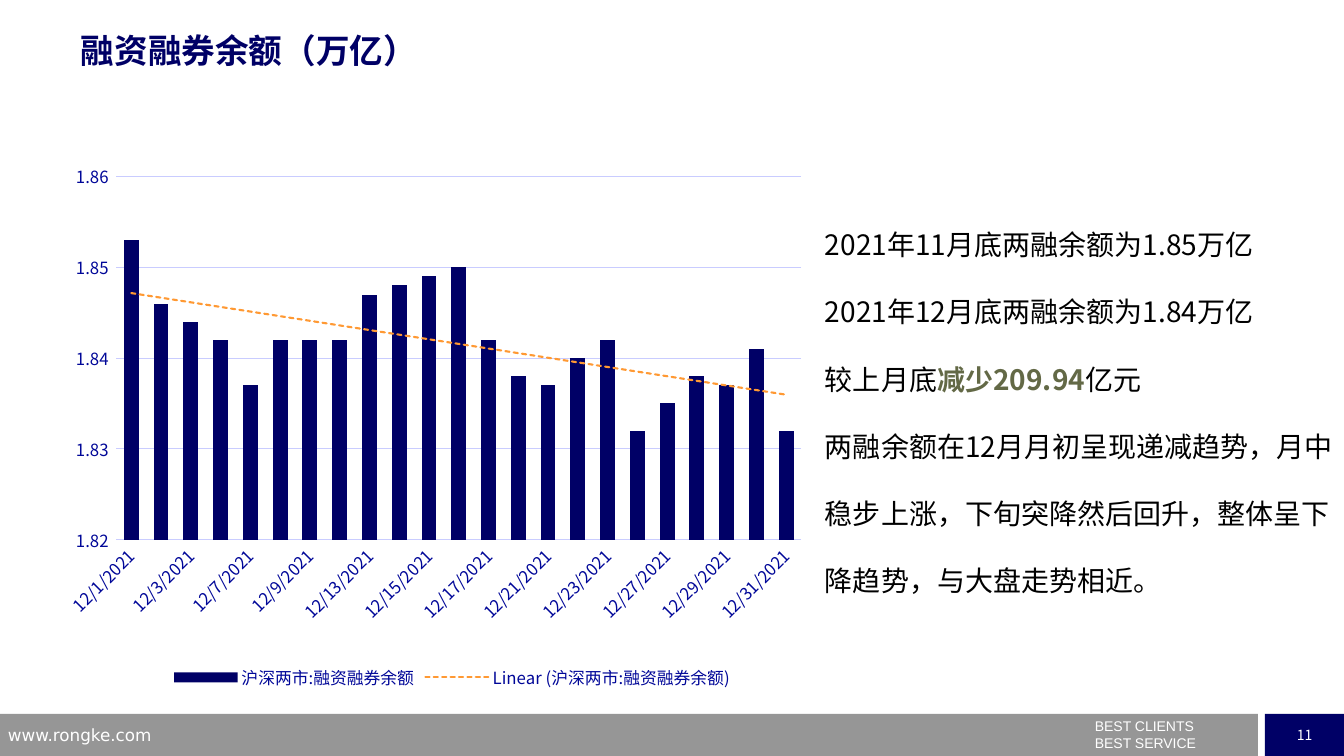
import pptx
import pptx.chart.data
import pptx.dml.color
import pptx.enum.chart
import pptx.enum.dml
import pptx.enum.shapes
import pptx.enum.text
import pptx.oxml
import pptx.oxml.ns
import pptx.util

PX = 914400 / 100.8
CJK = "Noto Sans CJK SC"
NAVY, WHITE, BLACK, GRID, LABEL = "000066", "FFFFFF", "000000", "C9CCFF", "000798"


def rgb(value):
    return pptx.dml.color.RGBColor.from_string(value)


def style(font, size, color, name=CJK, bold=False):
    """Set a font, with the same face for Latin and East Asian text."""
    font.size, font.bold, font.name = pptx.util.Pt(size), bold, name
    font.color.rgb = rgb(color)
    latin = font._element.find(pptx.oxml.ns.qn("a:latin"))
    latin.addnext(pptx.oxml.parse_xml(
        f'<a:ea {pptx.oxml.ns.nsdecls("a")} typeface="{name}"/>'))


prs = pptx.Presentation()
prs.slide_width, prs.slide_height = int(1344 * PX), int(756 * PX)
s = prs.slides.add_slide(prs.slide_layouts[5])

# Footer
for left, width, color in ((0, 1258, "969696"), (1265, 79, NAVY)):
    sp = s.shapes.add_shape(pptx.enum.shapes.MSO_SHAPE.RECTANGLE,
                            *(int(v * PX) for v in (left, 714, width, 42)))
    sp.shadow.inherit = False
    sp.fill.solid()
    sp.fill.fore_color.rgb = rgb(color)
    sp.line.fill.background()
p = sp.text_frame.paragraphs[0]
p.text = "11"
p.alignment = pptx.enum.text.PP_ALIGN.CENTER
style(p.runs[0].font, 10, WHITE)

for box, lines, size, name in (
    ((1085, 720, 258, 36), ["BEST CLIENTS", "BEST SERVICE"], 10, "Arial"),
    ((-2, 720, 325, 26), ["www.rongke.com"], 12, "DejaVu Sans"),
):
    tf = s.shapes.add_textbox(*(int(v * PX) for v in box)).text_frame
    tf.word_wrap = True
    tf.text = "\n".join(lines)
    for i, p in enumerate(tf.paragraphs):
        if len(lines) > 1:
            p.line_spacing = 0.5
        if i:
            p.space_before = pptx.util.Pt(6)
        style(p.runs[0].font, size, WHITE, name)

# Title and commentary
title = s.shapes.title
title.left, title.top, title.width, title.height = (int(v * PX) for v in (81, 30, 907, 39))
body = s.shapes.add_textbox(*(int(v * PX) for v in (825, 194, 519, 397)))
for sp in (title, body):
    tf = sp.text_frame
    tf.margin_left = tf.margin_right = tf.margin_top = tf.margin_bottom = 0
    tf.word_wrap = True
    tf.auto_size = pptx.enum.text.MSO_AUTO_SIZE.NONE
    tf.vertical_anchor = pptx.enum.text.MSO_ANCHOR.TOP

title.text_frame.text = "融资融券余额（万亿）"
p = title.text_frame.paragraphs[0]
p.alignment = pptx.enum.text.PP_ALIGN.LEFT
style(p.runs[0].font, 24, NAVY, bold=True)

comments = [
    ["2021年11月底两融余额为1.85万亿"],
    ["2021年12月底两融余额为1.84万亿"],
    ["较上月底", "减少209.94", "亿元"],
    ["两融余额在12月月初呈现递减趋势，月中稳步上涨，下旬突降然后回升，整体呈下降趋势，与大盘走势相近。"],
]
tf = body.text_frame
for i, parts in enumerate(comments):
    p = tf.add_paragraph() if i else tf.paragraphs[0]
    p.line_spacing = 2.0
    for j, part in enumerate(parts):
        r = p.add_run()
        r.text = part
        style(r.font, 20, "636946" if j == 1 else BLACK, bold=j == 1)

# Chart: trading days of December 2021 as date serials, weekends left out
data = pptx.chart.data.CategoryChartData(number_format="0.000")
data.categories = [day for day in range(44531, 44562) if day % 7 > 1]
data.categories.number_format = "m/d/yyyy"
data.add_series("沪深两市:融资融券余额", [
    1.853, 1.846, 1.844, 1.842, 1.837, 1.842, 1.842, 1.842, 1.847, 1.848, 1.849, 1.85,
    1.842, 1.838, 1.837, 1.84, 1.842, 1.832, 1.835, 1.838, 1.837, 1.841, 1.832])
chart = s.shapes.add_chart(pptx.enum.chart.XL_CHART_TYPE.COLUMN_CLUSTERED,
                           *(int(v * PX) for v in (25, 112, 854, 582)), data).chart
chart.has_title = False
chart.has_legend = True
chart.legend.position = pptx.enum.chart.XL_LEGEND_POSITION.BOTTOM
chart.legend.include_in_layout = False
style(chart.font, 10, BLACK)
style(chart.legend.font, 12, LABEL)

days, values = chart.category_axis, chart.value_axis
for axis in (days, values):
    axis.major_tick_mark = axis.minor_tick_mark = pptx.enum.chart.XL_TICK_MARK.NONE
    style(axis.tick_labels.font, 12, LABEL)
days.tick_labels.number_format = "m/d/yyyy"
days.tick_labels.number_format_is_linked = False
days._element.txPr.find(pptx.oxml.ns.qn("a:bodyPr")).set("rot", "-2700000")
days._element.find(pptx.oxml.ns.qn("c:auto")).set("val", "0")
values.minimum_scale, values.maximum_scale, values.major_unit = 1.82, 1.86, 0.01
values.tick_labels.number_format = "0.00_ "
values.tick_labels.number_format_is_linked = False
values.format.line.fill.background()
for line in (days.format.line, values.major_gridlines.format.line):
    line.color.rgb = rgb(GRID)
    line.width = pptx.util.Pt(0.75)

plot = chart.plots[0]
plot.gap_width, plot.overlap, plot.vary_by_categories = 100, -24, False
series = plot.series[0]
series.format.fill.solid()
series.format.fill.fore_color.rgb = rgb(NAVY)
series._element.find(pptx.oxml.ns.qn("c:cat")).addprevious(pptx.oxml.parse_xml(
    f'<c:trendline {pptx.oxml.ns.nsdecls("c", "a")}><c:spPr><a:ln w="19050" cap="rnd">'
    '<a:solidFill><a:srgbClr val="FF9933"/></a:solidFill><a:prstDash val="sysDash"/></a:ln></c:spPr>'
    '<c:trendlineType val="linear"/><c:dispRSqr val="0"/><c:dispEq val="0"/></c:trendline>'))

area = chart._chartSpace.chart.plotArea
for layout in area.findall(pptx.oxml.ns.qn("c:layout")):
    area.remove(layout)
frame = "".join(f'<c:{key} val="{val}"/>' for key, val in (
    ("layoutTarget", "inner"), ("xMode", "edge"), ("yMode", "edge"),
    ("x", 0.107), ("y", 0.111), ("w", 0.802), ("h", 0.624)))
area.insert(0, pptx.oxml.parse_xml(
    f'<c:layout {pptx.oxml.ns.nsdecls("c")}><c:manualLayout>{frame}</c:manualLayout></c:layout>'))

prs.save("out.pptx")
